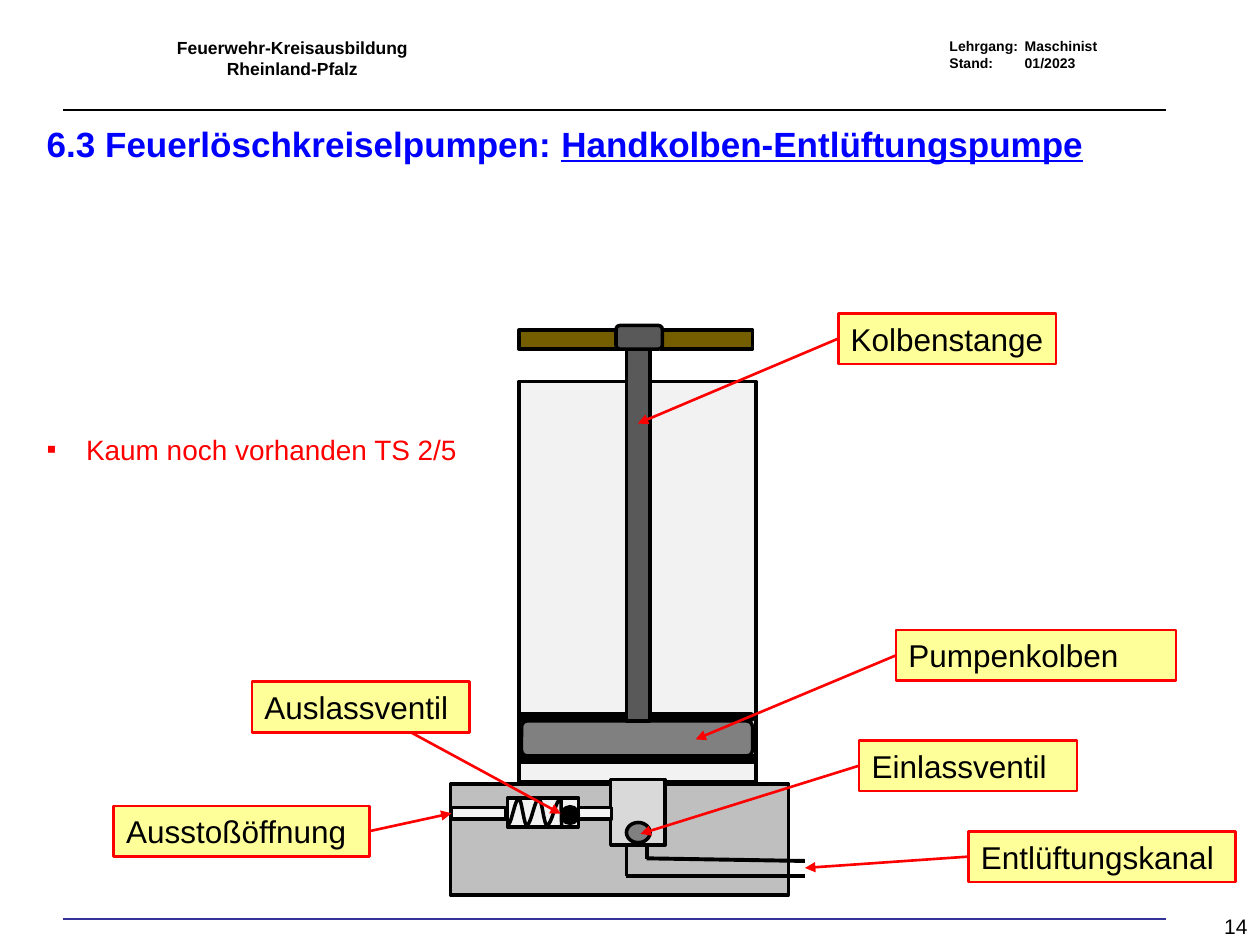
from math import cos, pi
from lxml.etree import SubElement
from pptx import Presentation
from pptx.dml.color import RGBColor
from pptx.enum.shapes import MSO_CONNECTOR, MSO_SHAPE
from pptx.enum.text import MSO_ANCHOR, MSO_AUTO_SIZE, PP_ALIGN
from pptx.oxml.ns import qn
from pptx.util import Pt

BLACK = RGBColor(0x00, 0x00, 0x00)
RED = RGBColor(0xFF, 0x00, 0x00)
BLUE = RGBColor(0x00, 0x00, 0xFF)
NAVY = RGBColor(0x33, 0x33, 0x99)
YELLOW = RGBColor(0xFF, 0xFF, 0x99)
WOOD = RGBColor(0x74, 0x5E, 0x00)
STEEL = RGBColor(0x59, 0x59, 0x59)
GREY = RGBColor(0x80, 0x80, 0x80)
BLOCK_GREY = RGBColor(0xBF, 0xBF, 0xBF)
CHAMBER_GREY = RGBColor(0xD9, 0xD9, 0xD9)
PALE = RGBColor(0xF2, 0xF2, 0xF2)

RECT, ROUND, OVAL = MSO_SHAPE.RECTANGLE, MSO_SHAPE.ROUNDED_RECTANGLE, MSO_SHAPE.OVAL
TOP, LEFT, BOTTOM, RIGHT = range(4)


def place(shape, bounds):
    shape.left, shape.top, shape.width, shape.height = map(Pt, bounds)


def style_font(font, size, color=BLACK, bold=False):
    font.name, font.size, font.bold = "Arial", Pt(size), bold
    font.color.rgb = color


def format_text(shape, size, color=BLACK, bold=False, align=PP_ALIGN.LEFT):
    for para in shape.text_frame.paragraphs:
        para.alignment = align
        for span in para.runs:
            style_font(span.font, size, color, bold)


def add_text(page, bounds, text, size, bold=False, align=PP_ALIGN.LEFT, anchor=MSO_ANCHOR.TOP):
    box = page.shapes.add_textbox(*map(Pt, bounds))
    box.text_frame.word_wrap = True
    box.text_frame.vertical_anchor = anchor
    box.text_frame.text = text
    format_text(box, size, bold=bold, align=align)
    return box


def add_part(page, kind, bounds, fill, line=BLACK, weight=2):
    part = page.shapes.add_shape(kind, *map(Pt, bounds))
    part.shadow.inherit = False
    part.fill.solid()
    part.fill.fore_color.rgb = fill
    part.line.color.rgb = line
    part.line.width = Pt(weight)
    return part


def add_line(page, start, end, color=BLACK, weight=1):
    line = page.shapes.add_connector(MSO_CONNECTOR.STRAIGHT, *map(Pt, start + end))
    line.line.color.rgb = color
    line.line.width = Pt(weight)
    SubElement(line._element.spPr, qn("a:effectLst"))
    return line


def add_label(page, text, left, top, width):
    label = add_part(page, RECT, (left, top, width, 29), YELLOW, RED, 1.5)
    label.text_frame.text = text
    label.text_frame.word_wrap = False
    format_text(label, 18)
    return label


def add_pointer(page, tip, start):
    pointer = add_line(page, tip, start, RED, 1.5)
    SubElement(pointer.line._get_or_add_ln(), qn("a:headEnd"), type="triangle")
    return pointer


def add_spring(page):
    turns = (290, 296.5, 301, 308, 312.5, 320.5, 321)
    low, high, steps = 471.5, 456.5, 12
    points = []
    for index, (start, end) in enumerate(zip(turns, turns[1:])):
        sign = 1 if index % 2 == 0 else -1
        for step in range(1, steps + 1):
            share = step / steps
            height = (low + high) / 2 + sign * cos(pi * share) * (low - high) / 2
            points.append((Pt(start + share * (end - start)), Pt(height)))
    builder = page.shapes.build_freeform(Pt(turns[0]), Pt(low))
    builder.add_line_segments(points, close=False)
    spring = builder.convert_to_shape()
    spring.shadow.inherit = False
    spring.fill.background()
    spring.line.color.rgb = BLACK
    spring.line.width = Pt(2)


def add_header_and_footer(page):
    add_text(page, (88, 17.5, 158, 32), "Feuerwehr-Kreisausbildung\nRheinland-Pfalz",
             10, True, PP_ALIGN.CENTER)
    course = add_text(page, (535.5, 18, 119, 39), "Lehrgang:\tMaschinist\nStand:\t01/2023", 8, True)
    for para in course.text_frame.paragraphs:
        tabs = SubElement(para._p.get_or_add_pPr(), qn("a:tabLst"))
        SubElement(tabs, qn("a:tab"), pos=str(Pt(43)), algn="l")
    for y, color in ((63, BLACK), (525, NAVY)):
        add_line(page, (36, y), (666, y), color)
    add_text(page, (570, 504, 150, 36), "14", 12, align=PP_ALIGN.RIGHT, anchor=MSO_ANCHOR.BOTTOM)


def fill_title(title):
    place(title, (19.5, 71.5, 680, 25))
    frame = title.text_frame
    frame.auto_size = MSO_AUTO_SIZE.NONE
    frame.word_wrap = False
    frame.vertical_anchor = MSO_ANCHOR.BOTTOM
    frame.margin_top, frame.margin_bottom = 0, Pt(2.5)
    para = frame.paragraphs[0]
    for text in ("6.3 Feuerlöschkreiselpumpen: ", "Handkolben-Entlüftungspumpe"):
        para.add_run().text = text
    format_text(title, 20, BLUE, True)
    para.runs[1].font.underline = True


def fill_body(body):
    place(body, (19.5, 243.5, 487.5, 26.5))
    body.text_frame.auto_size = MSO_AUTO_SIZE.NONE
    body.text_frame.text = "Kaum noch vorhanden TS 2/5"
    para = body.text_frame.paragraphs[0]
    para.space_before = Pt(0)
    properties = para._p.get_or_add_pPr()
    properties.set("marL", str(Pt(22.5)))
    properties.set("indent", str(Pt(-22.5)))
    SubElement(properties, qn("a:buFont"), typeface="Arial")
    SubElement(properties, qn("a:buChar"), char="▪")
    format_text(body, 16, RED)


def draw_pump(page):
    for left, width in ((296.5, 57.5), (377.5, 52.5)):
        add_part(page, RECT, (left, 188.5, width, 11), WOOD)
    add_part(page, RECT, (257.5, 448, 193 - 50.5 + 100.5 - 50, 63.5), BLOCK_GREY)
    add_part(page, RECT, (296.5, 218, 135.5, 228.5), PALE)
    add_part(page, RECT, (349, 445.5, 31, 37.5), CHAMBER_GREY)
    for start, end in (
        ((358, 482.5), (358, 500.5)),
        ((369.5, 482.5), (369.5, 491)),
        ((369.5, 490.5), (460, 492)),
        ((358, 500.5), (460, 500.5)),
    ):
        add_line(page, start, end, weight=2.25)
    for kind, bounds, fill in (
        (OVAL, (358, 470, 13.5, 11.5), GREY),
        (ROUND, (298, 412, 132, 20), GREY),
        (ROUND, (297.5, 408, 132.5, 3.5), BLACK),
        (ROUND, (296.5, 432, 135.5, 3.5), BLACK),
        (RECT, (358, 199.5, 13.5, 212.5), STEEL),
        (ROUND, (352, 186, 26.5, 13.5), STEEL),
        (RECT, (330, 461.5, 19.5, 6.5), PALE),
        (RECT, (290, 456, 40.5, 16.5), PALE),
    ):
        add_part(page, kind, bounds, fill)
    outlet = add_part(page, RECT, (258, 461.5, 31, 6.5), PALE)
    add_spring(page)
    add_part(page, OVAL, (321, 461, 9.5, 9.5), BLACK)
    return outlet


def add_labels(page, outlet):
    for text, left, top, width, tip in (
        ("Kolbenstange", 479, 179, 124.5, (364.5, 242)),
        ("Pumpenkolben", 512, 360, 160, (397.5, 422.5)),
        ("Einlassventil", 491, 423, 124.5, (366, 476.5)),
        ("Entlüftungskanal", 553.5, 475, 152.5, (460, 496)),
    ):
        label = add_label(page, text, left, top, width)
        add_pointer(page, tip, (left, top + 14.5)).end_connect(label, LEFT)
    add_pointer(page, (320.5, 465), (232, 417))
    add_label(page, "Auslassventil", 144, 389.5, 124.5)
    label = add_label(page, "Ausstoßöffnung", 65, 460.5, 146)
    pointer = add_pointer(page, (258, 465), (211, 475))
    pointer.begin_connect(outlet, LEFT)
    pointer.end_connect(label, RIGHT)


def main():
    deck = Presentation()
    deck.slide_width, deck.slide_height = Pt(720), Pt(540)
    page = deck.slides.add_slide(deck.slide_layouts[1])
    add_header_and_footer(page)
    fill_title(page.shapes.title)
    fill_body(page.placeholders[1])
    outlet = draw_pump(page)
    add_labels(page, outlet)
    deck.save("out.pptx")


if __name__ == "__main__":
    main()
